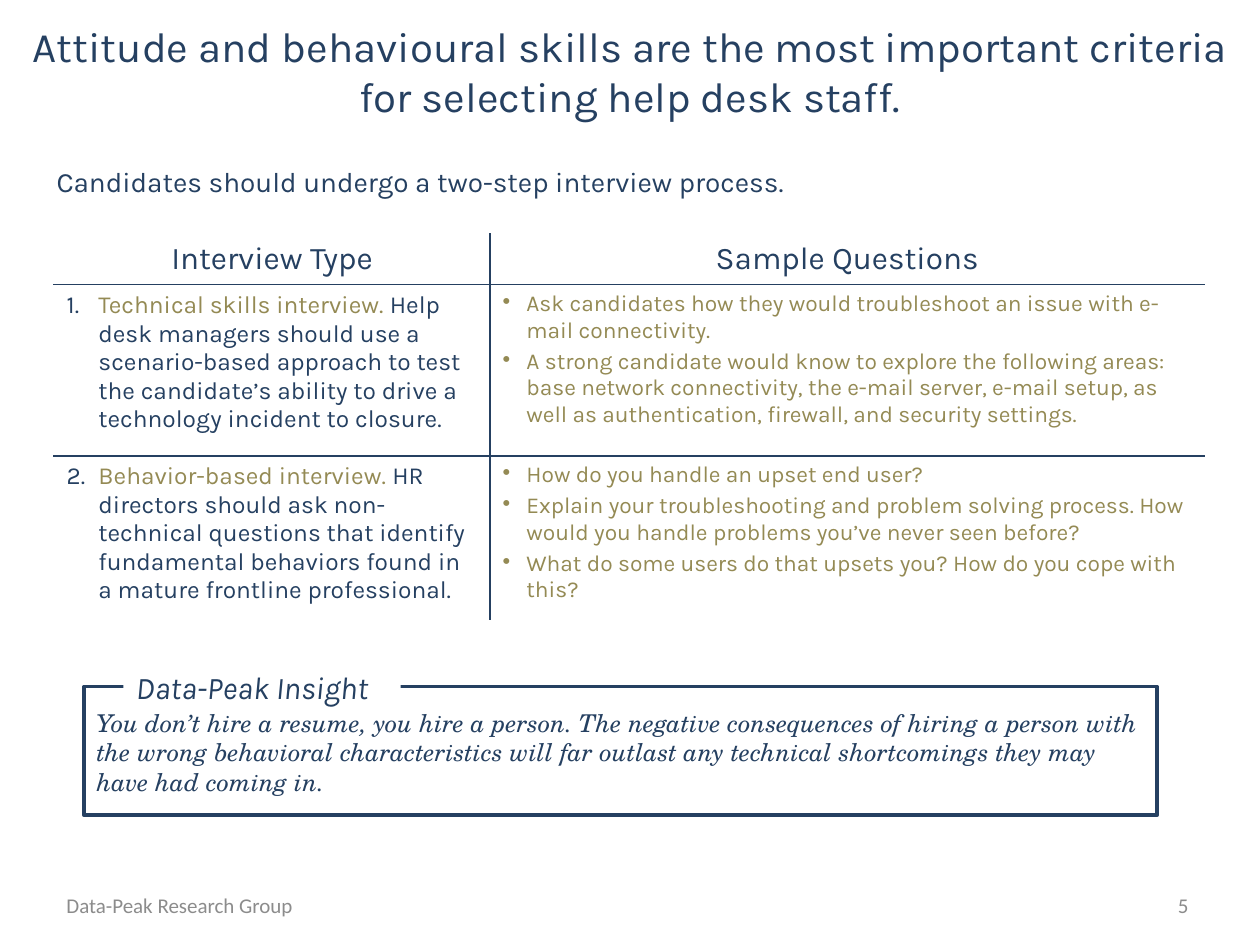
from dataclasses import dataclass

from lxml import etree
from pptx import Presentation
from pptx.dml.color import RGBColor
from pptx.enum.shapes import MSO_SHAPE
from pptx.enum.text import MSO_ANCHOR, MSO_AUTO_SIZE, PP_ALIGN
from pptx.oxml.ns import qn
from pptx.util import Cm, Pt

LEFT, CENTER, RIGHT = PP_ALIGN.LEFT, PP_ALIGN.CENTER, PP_ALIGN.RIGHT
TOP, MIDDLE = MSO_ANCHOR.TOP, MSO_ANCHOR.MIDDLE
NO_AUTOFIT = MSO_AUTO_SIZE.NONE
RECTANGLE = MSO_SHAPE.RECTANGLE
TITLE_ONLY = 5


@dataclass(frozen=True)
class Theme:
    """Colours, fonts and type sizes of the slide."""

    navy: str = "254061"
    olive: str = "948A54"
    grey: str = "8C8C8C"
    white: str = "FFFFFF"
    sans: str = "Karla"
    serif: str = "TeX Gyre Schola"
    plain: str = "Calibri"
    title: int = 24
    heading: int = 18
    lead: int = 16
    body: int = 14
    question: int = 13
    footer: int = 12


THEME = Theme()

INTERVIEWS = [
    (
        "Technical skills interview.",
        " Help desk managers should use a scenario-based approach to test the "
        "candidate’s ability to drive a technology incident to closure.",
        [
            "Ask candidates how they would troubleshoot an issue with e-mail connectivity.",
            "A strong candidate would know to explore the following areas: base network "
            "connectivity, the e-mail server, e-mail setup, as well as authentication, "
            "firewall, and security settings.",
        ],
    ),
    (
        "Behavior-based interview.",
        " HR directors should ask non-technical questions that identify fundamental "
        "behaviors found in a mature frontline professional.",
        [
            "How do you handle an upset end user?",
            "Explain your troubleshooting and problem solving process. How would you "
            "handle problems you’ve never seen before?",
            "What do some users do that upsets you? How do you cope with this?",
        ],
    ),
]


def apply(target, values):
    """Set each named attribute on the target."""
    for name, value in values.items():
        setattr(target, name, value)


def add_span(para, text, size, color=THEME.navy, font=THEME.sans, italic=False):
    """Append one formatted run to a paragraph."""
    span = para.add_run()
    span.text = text
    apply(span.font, {"size": Pt(size), "name": font, "italic": italic, "bold": False})
    span.font.color.rgb = RGBColor.from_string(color)


def write(shape, text, size, align=LEFT, anchor=TOP, **look):
    """Fill a shape with one paragraph of text."""
    frame = shape.text_frame
    apply(frame, {"word_wrap": True, "auto_size": NO_AUTOFIT, "vertical_anchor": anchor})
    frame.paragraphs[0].alignment = align
    add_span(frame.paragraphs[0], text, size, **look)


def place(shape, left, top, width, height):
    """Move and size a shape, in centimetres."""
    apply(shape, {"left": Cm(left), "top": Cm(top), "width": Cm(width), "height": Cm(height)})


def add_text(page, bounds, text, size, **look):
    """Add a text box with one paragraph."""
    box = page.shapes.add_textbox(*map(Cm, bounds))
    write(box, text, size, **look)


def add_rectangle(group, bounds):
    """Add a shadowless rectangle without fill or line."""
    box = group.shapes.add_shape(RECTANGLE, *map(Cm, bounds))
    box.shadow.inherit = False
    box.fill.background()
    box.line.fill.background()
    return box


def set_marker(para, indent, color, tag, **attributes):
    """Give a list paragraph its hanging indent and marker."""
    properties = para._p.get_or_add_pPr()
    properties.set("marL", str(Cm(indent)))
    properties.set("indent", str(-Cm(indent)))
    fill = etree.SubElement(properties, qn("a:buClr"))
    etree.SubElement(fill, qn("a:srgbClr"), val=color)
    etree.SubElement(properties, qn(tag), **attributes)


def set_borders(cell, colors):
    """Draw the cell's sides, given as side letter to colour."""
    properties = cell._tc.get_or_add_tcPr()
    for side, color in colors.items():
        line = etree.SubElement(properties, qn(f"a:ln{side}"), w=str(Pt(1)))
        fill = etree.SubElement(line, qn("a:solidFill"))
        etree.SubElement(fill, qn("a:srgbClr"), val=color)


def style_cells(table):
    """Clear the fills and rule only the inner edges."""
    last_row, last_column = len(table.rows) - 1, len(table.columns) - 1
    for row in range(last_row + 1):
        for column in range(last_column + 1):
            inner = {"L": column > 0, "R": column < last_column,
                     "T": row > 0, "B": row < last_row}
            cell = table.cell(row, column)
            set_borders(cell, {side: THEME.navy if shown else THEME.white
                               for side, shown in inner.items()})
            cell.fill.background()


def add_interview_table(page):
    """Add the table of interview types and sample questions."""
    frame = page.shapes.add_table(3, 2, Cm(1.09), Cm(4.72), Cm(23.19), Cm(7.8))
    table = frame.table
    apply(table, {"first_row": False, "horz_banding": False})
    for column, width in zip(table.columns, (8.79, 14.4)):
        column.width = Cm(width)
    for row, height in zip(table.rows, (1.02, 3.45, 3.33)):
        row.height = Cm(height)
    style_cells(table)
    for column, heading in enumerate(("Interview Type", "Sample Questions")):
        para = table.cell(0, column).text_frame.paragraphs[0]
        apply(para, {"alignment": CENTER, "space_before": Pt(3.6)})
        add_span(para, heading, THEME.heading)
    for number, (name, detail, questions) in enumerate(INTERVIEWS, 1):
        para = table.cell(number, 0).text_frame.paragraphs[0]
        para.space_before = Pt(2.8)
        set_marker(para, 0.64, THEME.navy, "a:buAutoNum",
                   type="arabicPeriod", startAt=str(number))
        add_span(para, name, THEME.body, THEME.olive)
        add_span(para, detail, THEME.body)
        add_questions(table.cell(number, 1).text_frame, questions)


def add_questions(frame, questions):
    """Write sample questions as a bulleted list."""
    for index, question in enumerate(questions):
        para = frame.add_paragraph() if index else frame.paragraphs[0]
        para.space_before = Pt(2.6)
        set_marker(para, 0.48, THEME.olive, "a:buChar", char="•")
        add_span(para, question, THEME.question, THEME.olive)


def add_insight(page):
    """Add the framed quotation with its label over the top edge."""
    group = page.shapes.add_group_shape()
    panel = add_rectangle(group, (1.7, 13.84, 21.62, 2.6))
    panel.line.color.rgb = RGBColor.from_string(THEME.navy)
    panel.line.width = Pt(2.25)
    panel.text_frame.margin_top = Cm(0.43)
    write(panel, "You don’t hire a resume, you hire a person. The negative consequences of "
          "hiring a person with the wrong behavioral characteristics will far outlast any "
          "technical shortcomings they may have had coming in.",
          THEME.body, font=THEME.serif, italic=True)
    label = add_rectangle(group, (2.49, 13.34, 5.59, 1.02))
    label.fill.solid()
    label.fill.fore_color.rgb = RGBColor.from_string(THEME.white)
    write(label, "Data-Peak Insight", THEME.heading, italic=True)


def main():
    """Build the slide and save the deck."""
    deck = Presentation()
    apply(deck, {"slide_width": Cm(25.4), "slide_height": Cm(19.05)})
    page = deck.slides.add_slide(deck.slide_layouts[TITLE_ONLY])
    title = page.shapes.title
    place(title, 0, 0.13, 25.4, 2.59)
    write(title, "Attitude and behavioural skills are the most important criteria for "
          "selecting help desk staff.", THEME.title, align=CENTER, anchor=MIDDLE)
    add_text(page, (0.89, 3.2, 17.4, 0.94),
             "Candidates should undergo a two-step interview process.", THEME.lead)
    add_interview_table(page)
    add_insight(page)
    footer = {"anchor": MIDDLE, "color": THEME.grey, "font": THEME.plain}
    add_text(page, (1.09, 17.73, 9.19, 1.02), "Data-Peak Research Group",
             THEME.footer, **footer)
    add_text(page, (18.29, 17.73, 5.92, 1.02), "5", THEME.footer, align=RIGHT, **footer)
    deck.save("out.pptx")


if __name__ == "__main__":
    main()
